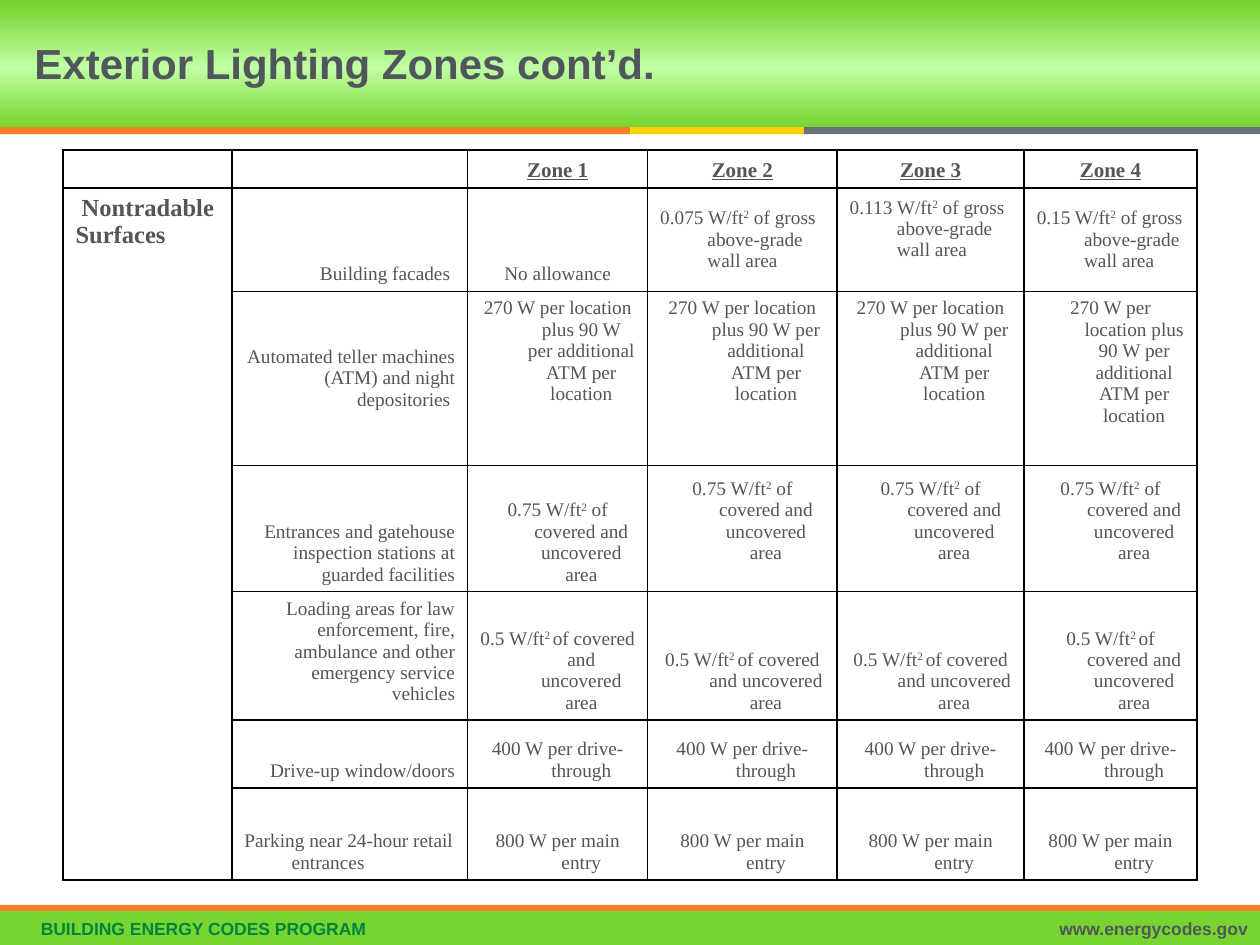
from copy import deepcopy

from lxml.etree import SubElement
from pptx import Presentation
from pptx.dml.color import RGBColor
from pptx.enum.shapes import MSO_SHAPE
from pptx.enum.text import MSO_ANCHOR as ANCHOR, MSO_AUTO_SIZE, PP_ALIGN as ALIGN
from pptx.oxml.ns import qn
from pptx.util import Pt

COLORS = {"text": "50565C", "program": "00853F", "green": "78D430", "glow": "C0FFA4",
          "orange": "F58025", "yellow": "FFD200", "gray": "6A737B", "border": "000000"}
SERIF, SANS = "Times New Roman", "Arial"
HANGING, INSET, LINE = 27, 3.6, 12.2
COLUMN_WIDTHS = [96.5, 134.8, 102.8, 108.3, 106.9, 98.7]
ROW_HEIGHTS = [21, 56.2, 99.4, 68.6, 68.4, 38.8, 52.6]
ZONES = ["Zone 1", "Zone 2", "Zone 3", "Zone 4"]
GROSS = " W/ft|2| of gross above-grade wall area"
SURFACES = [
    ("Building facades ", ["No allowance", "0.075" + GROSS, "0.113" + GROSS, "0.15" + GROSS]),
    ("Automated teller machines (ATM) and night depositories ",
     ["270 W per location plus 90 W per additional ATM per location"] * 4),
    ("Entrances and gatehouse inspection stations at guarded facilities",
     ["0.75 W/ft|2| of covered and uncovered area"] * 4),
    ("Loading areas for law enforcement, fire, ambulance and other emergency service vehicles",
     ["0.5 W/ft|2 |of covered and uncovered area"] * 4),
    ("Drive-up window/doors", ["400 W per drive-through"] * 4),
    ("Parking near 24-hour retail entrances", ["800 W per main entry"] * 4),
]
ANCHORS = {(1, 3): ANCHOR.MIDDLE, (1, 4): ANCHOR.MIDDLE, (1, 5): ANCHOR.MIDDLE,
           (2, 1): ANCHOR.MIDDLE, (4, 1): ANCHOR.TOP,
           **{(2, column): ANCHOR.TOP for column in range(2, 6)}}
LEFT_CELLS = {(1, 3), (1, 4), (1, 5), (6, 1)}
LIFTED_CELLS = {(1, 4), (3, 3), (3, 4), (3, 5)}


def rgb(name):
    """Return the named colour."""
    return RGBColor.from_string(COLORS[name])


def style(font, size, name, color="text", bold=False):
    """Set the size, face, colour and weight of a font."""
    font.size, font.name, font.bold = Pt(size), name, bold
    font.color.rgb = rgb(color)


def add_band(slide, left, top, width, height, color):
    """Add a plain filled rectangle."""
    band = slide.shapes.add_shape(MSO_SHAPE.RECTANGLE, Pt(left), Pt(top), Pt(width), Pt(height))
    band.shadow.inherit = False
    band.line.fill.background()
    band.fill.solid()
    band.fill.fore_color.rgb = rgb(color)
    return band


def add_header(slide, left, top, width, height):
    """Add the glowing band, the title and the three-coloured rule."""
    band = add_band(slide, left, top, width, height, "green")
    band.fill.gradient()
    band.fill.gradient_angle = 90
    stop_list = band._element.spPr.find(qn("a:gradFill")).find(qn("a:gsLst"))
    stop_list.append(deepcopy(stop_list[0]))
    stops = [(0, "green"), (0.47, "glow"), (0.97, "green")]
    for stop, (position, color) in zip(band.fill.gradient_stops, stops):
        stop.position = position
        stop.color.rgb = rgb(color)

    for start, end, color in [(0, 360, "orange"), (360, 459.4, "yellow"), (459.4, width, "gray")]:
        add_band(slide, left + start, top + height, end - start, 4, color)

    title = slide.shapes.title
    slide.shapes._spTree.append(title._element)
    title.left, title.top, title.width, title.height = Pt(left + 12.5), Pt(top), Pt(448), Pt(height)
    text_frame = title.text_frame
    text_frame.text = "Exterior Lighting Zones cont’d."
    text_frame.auto_size = MSO_AUTO_SIZE.NONE
    text_frame.vertical_anchor = ANCHOR.MIDDLE
    paragraph = text_frame.paragraphs[0]
    paragraph.alignment, paragraph.line_spacing = ALIGN.LEFT, Pt(28)
    style(paragraph.runs[0].font, 24, SANS, bold=True)


def add_footer(slide, left, top, width, height):
    """Add the footer band with the program name and the web address."""
    add_band(slide, left, top, width, 3.6, "orange")
    add_band(slide, left, top + 3.6, width, height - 3.6, "green")
    labels = [(5, 574, "BUILDING ENERGY CODES PROGRAM", "program", ALIGN.LEFT),
              (431.3, 288.7, "www.energycodes.gov", "text", ALIGN.RIGHT)]
    for start, extent, text, color, alignment in labels:
        box = slide.shapes.add_textbox(Pt(left + start), Pt(top + 4), Pt(extent), Pt(height - 4))
        text_frame = box.text_frame
        text_frame.word_wrap = True
        text_frame.vertical_anchor = ANCHOR.MIDDLE
        text_frame.margin_left, text_frame.margin_right = Pt(18.3), Pt(7.2)
        text_frame.margin_top = text_frame.margin_bottom = 0
        text_frame.text = text
        paragraph = text_frame.paragraphs[0]
        paragraph.alignment = alignment
        style(paragraph.runs[0].font, 10, SANS, color, bold=True)


def set_borders(cell, sides):
    """Draw a thin line on the given sides of a cell and none on the others."""
    properties = cell._tc.get_or_add_tcPr()
    for index, side in enumerate("LRTB"):
        line = SubElement(properties, qn(f"a:ln{side}"), w=str(Pt(1)))
        properties.insert(index, line)
        if side in sides:
            fill = SubElement(line, qn("a:solidFill"))
            SubElement(fill, qn("a:srgbClr"), val=COLORS["border"])
        else:
            SubElement(line, qn("a:noFill"))


def fill_cell(cell, text, alignment, anchor, size=11, bold=False, underline=None):
    """Write hanging paragraphs, with text between bars raised as superscript."""
    cell.vertical_anchor = anchor
    cell.margin_top = cell.margin_bottom = Pt(INSET)
    text_frame = cell.text_frame
    text_frame.text = text.replace("|", "")
    for paragraph, line in zip(text_frame.paragraphs, text.split("\n")):
        paragraph.alignment = alignment
        properties = paragraph._p.get_or_add_pPr()
        properties.set("marL", str(Pt(HANGING)))
        properties.set("indent", str(-Pt(HANGING)))
        paragraph.clear()
        for index, part in enumerate(line.split("|") if line else []):
            run = paragraph.add_run()
            run.text = part
            style(run.font, size, SERIF, bold=bold)
            run.font.underline = underline
            if index % 2:
                run._r.get_or_add_rPr().set("baseline", "30000")
        if not line:
            paragraph._p.get_or_add_endParaRPr().set("sz", str(size * 100))


def add_zone_table(slide, left, top):
    """Add the table of lighting allowances by surface and zone."""
    frame = slide.shapes.add_table(len(ROW_HEIGHTS), len(COLUMN_WIDTHS), Pt(left), Pt(top),
                                   Pt(sum(COLUMN_WIDTHS)), Pt(sum(ROW_HEIGHTS)))
    table = frame.table
    table.first_row = table.horz_banding = False
    for column, width in zip(table.columns, COLUMN_WIDTHS):
        column.width = Pt(width)
    for row, height in zip(table.rows, ROW_HEIGHTS):
        row.height = Pt(height)

    grid = [["", "", *ZONES]] + [["", label, *values] for label, values in SURFACES]
    last_row = len(grid) - 1
    for row, texts in enumerate(grid):
        for column, text in enumerate(texts):
            cell, place = table.cell(row, column), (row, column)
            cell.fill.background()
            if row == 0:
                fill_cell(cell, text, ALIGN.CENTER, ANCHOR.BOTTOM, 12, True, True)
            elif place == (1, 0):
                fill_cell(cell, " Nontradable\nSurfaces", ALIGN.LEFT, ANCHOR.TOP, 14, True)
            else:
                alignment = ALIGN.RIGHT if column == 1 else ALIGN.CENTER
                if place in LEFT_CELLS:
                    alignment = ALIGN.LEFT
                fill_cell(cell, text, alignment, ANCHORS.get(place, ANCHOR.BOTTOM))
            if place in LIFTED_CELLS:
                cell.margin_bottom = Pt(INSET + LINE)
            top_side = "T" if column or row < 2 else ""
            bottom_side = "B" if column or row in (0, last_row) else ""
            set_borders(cell, "LR" + top_side + bottom_side)


def main():
    """Build the slide and save it."""
    presentation = Presentation()
    presentation.slide_width, presentation.slide_height = Pt(720), Pt(540)
    slide = presentation.slides.add_slide(presentation.slide_layouts[5])
    add_header(slide, 0, 0, 720, 72.7)
    add_footer(slide, 0, 517, 720, 23)
    add_zone_table(slide, 36, 85.8)
    presentation.save("out.pptx")


if __name__ == "__main__":
    main()
